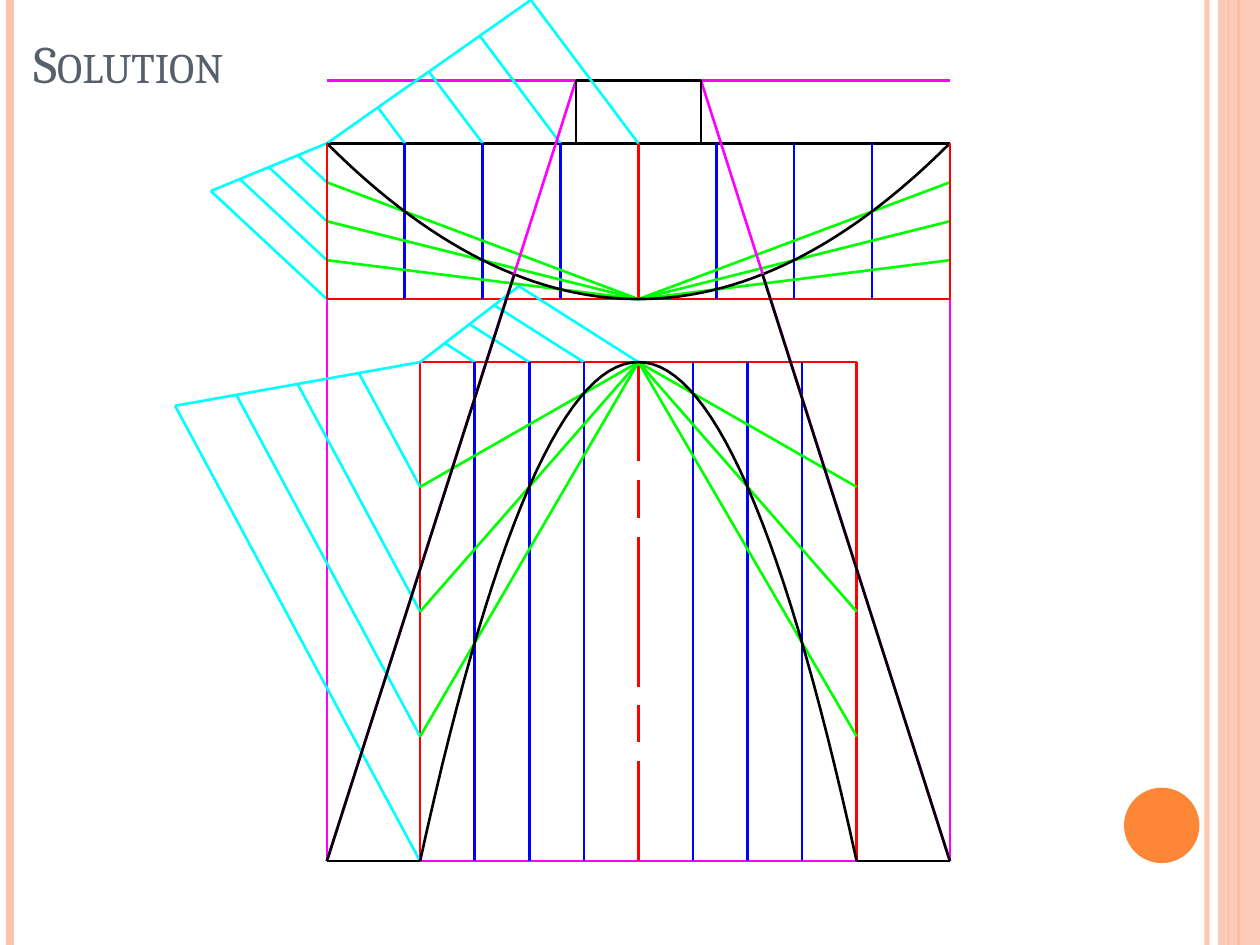
import pptx
import pptx.dml.color
import pptx.enum.shapes
import pptx.enum.text
import pptx.oxml
import pptx.oxml.ns
import pptx.util

Cm = pptx.util.Cm
RGBColor = pptx.dml.color.RGBColor

BLACK = RGBColor(0x00, 0x00, 0x00)
RED = RGBColor(0xFF, 0x00, 0x00)
GREEN = RGBColor(0x00, 0xFF, 0x00)
BLUE = RGBColor(0x00, 0x00, 0xFF)
CYAN = RGBColor(0x00, 0xFF, 0xFF)
MAGENTA = RGBColor(0xFF, 0x00, 0xFF)
PEACH = RGBColor(0xFE, 0xC3, 0xAE)
ORANGE = RGBColor(0xFE, 0x86, 0x37)
SLATE = RGBColor(0x57, 0x5F, 0x6D)

PAGE_WIDTH, PAGE_HEIGHT = 25.4, 19.05
DIVISIONS = 4
CURVE_STEPS = 60
CENTRE = 12.87
TOP, RIM, BOWL_BOTTOM, ARCH_TOP, BASE = 1.62, 2.89, 6.03, 7.3, 17.36
OUTER, ARCH, NECK = 6.28, 4.4, 1.26
CUT_OFFSET, CUT_LEVEL = 2.5, 5.53
LEFT, RIGHT = CENTRE - OUTER, CENTRE + OUTER
ARCH_LEFT, ARCH_RIGHT = CENTRE - ARCH, CENTRE + ARCH

presentation = pptx.Presentation()
presentation.slide_width = Cm(PAGE_WIDTH)
presentation.slide_height = Cm(PAGE_HEIGHT)
slide = presentation.slides.add_slide(presentation.slide_layouts[5])


def draw_line(start, end, color, width=1.5):
    line = slide.shapes.add_connector(
        pptx.enum.shapes.MSO_CONNECTOR.STRAIGHT,
        Cm(start[0]), Cm(start[1]), Cm(end[0]), Cm(end[1]))
    line.line.color.rgb = color
    line.line.width = pptx.util.Pt(width)
    line._element.spPr.append(pptx.oxml.parse_xml(
        "<a:effectLst %s/>" % pptx.oxml.ns.nsdecls("a")))
    return line


def set_opacity(element, percent):
    for color in element.iter(pptx.oxml.ns.qn("a:srgbClr")):
        color.append(pptx.oxml.parse_xml(
            '<a:alpha %s val="%d"/>' % (pptx.oxml.ns.nsdecls("a"), percent * 1000)))


stripes = [(24.33, PEACH, 3), (0.2, PEACH, 4.5), (24.97, ORANGE, 1.5), (24.77, ORANGE, 0.75)]
for x, color, width in stripes:
    stripe = draw_line((x, 0), (x, PAGE_HEIGHT), color, width)
    if width == 3:
        set_opacity(stripe._element, 93)

decorations = [
    (pptx.enum.shapes.MSO_SHAPE.RECTANGLE, 24.55, 0, 0.85, PAGE_HEIGHT, PEACH, 87),
    (pptx.enum.shapes.MSO_SHAPE.OVAL, 22.66, 15.88, 1.52, 1.52, ORANGE, 100),
]
for kind, left, top, width, height, color, opacity in decorations:
    shape = slide.shapes.add_shape(kind, Cm(left), Cm(top), Cm(width), Cm(height))
    shape.shadow.inherit = False
    shape.fill.solid()
    shape.fill.fore_color.rgb = color
    shape.line.fill.background()
    if opacity < 100:
        set_opacity(shape._element.spPr, opacity)

title = slide.shapes.title
for name, value in {"left": 0.42, "top": 0.42, "width": 20.75, "height": 1.6}.items():
    setattr(title, name, Cm(value))
title.text_frame.vertical_anchor = pptx.enum.text.MSO_ANCHOR.BOTTOM
title.text_frame.auto_size = pptx.enum.text.MSO_AUTO_SIZE.NONE
paragraph = title.text_frame.paragraphs[0]
paragraph.alignment = pptx.enum.text.PP_ALIGN.LEFT
run = paragraph.add_run()
run.text = "Solution"
for name, value in {"name": "Cambria", "size": pptx.util.Pt(30), "bold": False}.items():
    setattr(run.font, name, value)
run.font.color.rgb = SLATE
run._r.get_or_add_rPr().set("cap", "small")

outlines = [
    ((LEFT, RIM), (LEFT, BASE), MAGENTA),
    ((RIGHT, RIM), (RIGHT, BASE), MAGENTA),
    ((LEFT, BASE), (RIGHT, BASE), MAGENTA),
    ((LEFT, TOP), (RIGHT, TOP), MAGENTA),
    ((CENTRE - NECK, TOP), (CENTRE + NECK, TOP), BLACK),
    ((LEFT, RIM), (RIGHT, RIM), RED),
    ((LEFT, RIM), (RIGHT, RIM), BLACK),
    ((LEFT, BOWL_BOTTOM), (RIGHT, BOWL_BOTTOM), RED),
    ((ARCH_LEFT, ARCH_TOP), (ARCH_RIGHT, ARCH_TOP), RED),
    ((ARCH_LEFT, ARCH_TOP), (ARCH_LEFT, BASE), RED),
    ((ARCH_RIGHT, ARCH_TOP), (ARCH_RIGHT, BASE), RED),
    ((CENTRE, RIM), (CENTRE, BOWL_BOTTOM), RED),
]
for start, end, color in outlines:
    draw_line(start, end, color)

axis_dashes = [(ARCH_TOP, 9.3), (9.68, 10.44), (10.82, 13.84), (14.22, 14.96), (15.34, BASE)]
for top, bottom in axis_dashes:
    draw_line((CENTRE, top), (CENTRE, bottom), RED)

dividers = [
    ((ARCH_LEFT, ARCH_TOP), (10.46, 5.77), (CENTRE, ARCH_TOP)),
    ((ARCH_LEFT, ARCH_TOP), (3.53, 8.18), (ARCH_LEFT, BASE)),
    ((LEFT, RIM), (4.25, 3.85), (LEFT, BOWL_BOTTOM)),
    ((LEFT, RIM), (10.7, 0), (CENTRE, RIM)),
]
for corner, tip, end in dividers:
    draw_line(corner, tip, CYAN)
    for step in range(1, DIVISIONS + 1):
        share = step / DIVISIONS
        on_tip, on_edge = [
            [a + (b - a) * share for a, b in zip(corner, target)] for target in (tip, end)]
        draw_line(on_tip, on_edge, CYAN)

parabolas = [(ARCH, ARCH_TOP, BASE), (OUTER, BOWL_BOTTOM, RIM)]
for half_width, vertex, edge in parabolas:
    for side in (-1, 1):
        for step in range(1, DIVISIONS):
            x = CENTRE + side * half_width * step / DIVISIONS
            draw_line((x, vertex), (x, edge), BLUE)
        for step in range(1, DIVISIONS):
            y = vertex + (edge - vertex) * step / DIVISIONS
            draw_line((CENTRE, vertex), (CENTRE + side * half_width, y), GREEN)
    points = []
    for step in range(CURVE_STEPS + 1):
        share = 2 * step / CURVE_STEPS - 1
        points.append((Cm(CENTRE + half_width * share),
                       Cm(vertex + (edge - vertex) * share ** 2)))
    builder = slide.shapes.build_freeform(*points[0])
    builder.add_line_segments(points[1:], close=False)
    curve = builder.convert_to_shape()
    curve.shadow.inherit = False
    curve.fill.background()
    curve.line.color.rgb = BLACK
    curve.line.width = pptx.util.Pt(1.5)

for side in (-1, 1):
    foot = (CENTRE + side * OUTER, BASE)
    neck = CENTRE + side * NECK
    draw_line(foot, (neck, TOP), MAGENTA)
    draw_line((neck, TOP), (neck, RIM), BLACK)
    draw_line((foot[0], RIM), (foot[0], BOWL_BOTTOM), RED)
    draw_line(foot, (CENTRE + side * CUT_OFFSET, CUT_LEVEL), BLACK)
    draw_line(foot, (CENTRE + side * ARCH, BASE), BLACK)

presentation.save("out.pptx")
